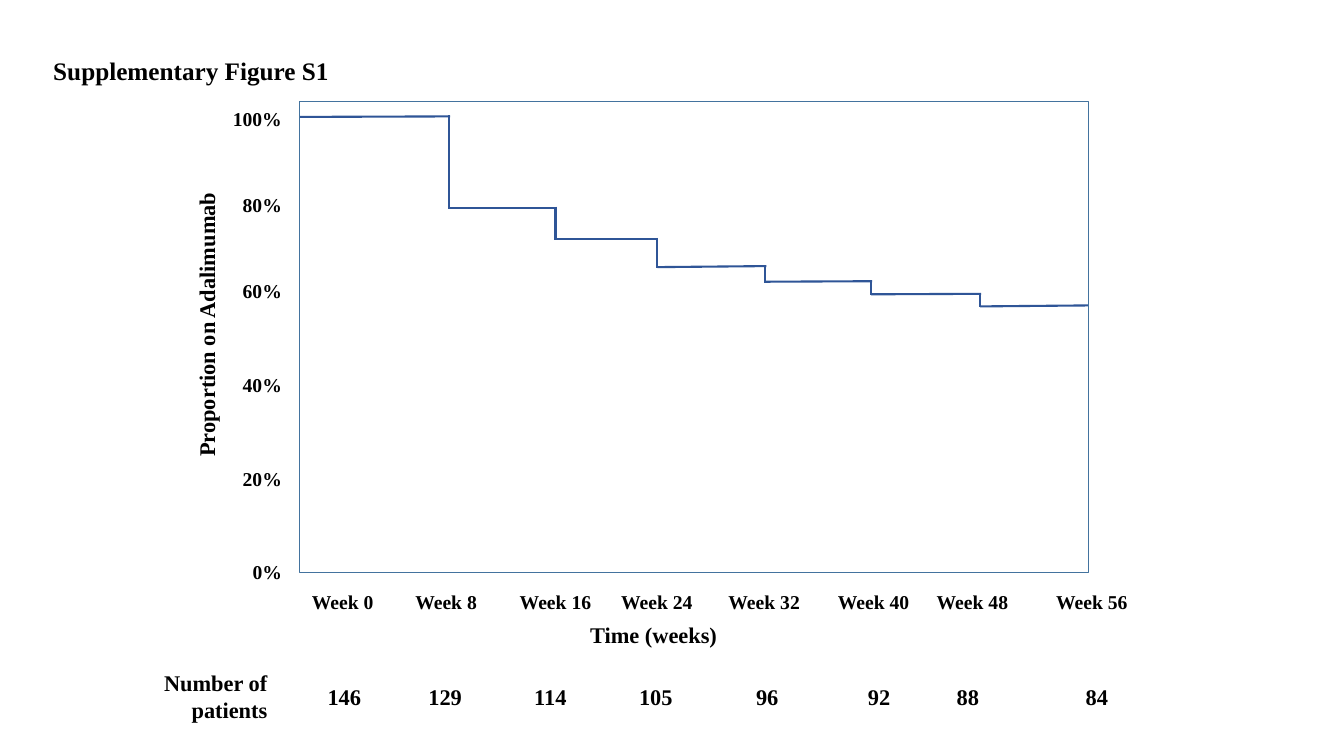
"""Builds the slide with the step curve of patients staying on treatment."""
from itertools import pairwise

from lxml import etree
from pptx import Presentation
from pptx.dml.color import RGBColor
from pptx.enum.shapes import MSO_CONNECTOR, MSO_SHAPE
from pptx.enum.text import MSO_ANCHOR, PP_ALIGN
from pptx.oxml.ns import qn
from pptx.util import Inches, Pt

LEFT, CENTER, RIGHT = PP_ALIGN.LEFT, PP_ALIGN.CENTER, PP_ALIGN.RIGHT
MIDDLE = MSO_ANCHOR.MIDDLE
STRAIGHT, RECTANGLE = MSO_CONNECTOR.STRAIGHT, MSO_SHAPE.RECTANGLE

FONT = "Times New Roman"
BLACK, WHITE = "000000", "FFFFFF"
CURVE_BLUE, FRAME_BLUE = "2F5597", "43739E"
COLUMNS, ROWS, CELL = 1333, 750, Inches(0.01)

TITLE = ("Supplementary Figure S1", 43, 50, 343, 40, 18, LEFT)
TIME_AXIS = ("Time (weeks)", 534, 611, 187, 37, 16, RIGHT)
PATIENTS_HEADING = ("Number of patients", 144, 658.5, 131, 64, 16, RIGHT)
PROPORTION_AXIS = ("Proportion on Adalimumab", 181, 138, 47, 325, 16, LEFT)

PERCENTS = [("100%", 101, 87), ("80%", 186, 72), ("60%", 271.5, 72),
            ("40%", 364.5, 72), ("20%", 457.5, 72), ("0%", 550.5, 72)]
WEEKS = [("Week 0", 297, 86), ("Week 8", 399.5, 86), ("Week 16", 504.5, 93),
         ("Week 24", 605, 93), ("Week 32", 711.5, 93), ("Week 40", 820, 93),
         ("Week 48", 918, 93), ("Week 56", 1036.5, 93)]
PATIENTS = ["146", "129", "114", "105", "96", "92", "88", "84"]
PATIENT_STOPS = [100, 205, 309, 425, 536, 624, 752]
PATIENTS_ROW = (315, 672.5, 818, 37, 16, LEFT)

PLOT = (297, 101, 782.5, 467)
DROPS = [297, 445.5, 551, 652, 759, 864, 972, 1079.5]
LEVELS = [(116, 115.5), (206, 206), (237, 237), (265, 264),
          (279.5, 279), (292, 291.5), (304, 303)]

PERCENT_RIGHT, WEEK_TOP, LABEL_HEIGHT, OVERLAP = 289.5, 580, 34, 1


def color(hex_code):
    return RGBColor.from_string(hex_code)


def cells(*counts):
    return [round(count * CELL) for count in counts]


def add_label(slide, wording, left, top, width, height, size, align, stops=()):
    label = slide.shapes.add_shape(RECTANGLE, *cells(left, top, width, height))
    label.shadow.inherit = False
    label.fill.solid()
    label.fill.fore_color.rgb = color(WHITE)
    label.line.fill.background()
    frame = label.text_frame
    frame.word_wrap = True
    frame.vertical_anchor = MIDDLE
    paragraph = frame.paragraphs[0]
    paragraph.alignment = align
    if stops:
        tabs = etree.SubElement(paragraph._p.get_or_add_pPr(), qn("a:tabLst"))
        for stop in cells(*stops):
            etree.SubElement(tabs, qn("a:tab"), pos=str(stop), algn="l")
    run = paragraph.add_run()
    run.text = wording
    run.font.name = FONT
    run.font.size = Pt(size)
    run.font.bold = True
    run.font.color.rgb = color(BLACK)
    return label


def add_segment(slide, *ends):
    segment = slide.shapes.add_connector(STRAIGHT, *cells(*ends))
    segment.line.color.rgb = color(CURVE_BLUE)
    segment.line.width = Pt(1.5)
    properties = segment._element.find(qn("p:spPr"))
    etree.SubElement(properties, qn("a:effectLst"))


def add_plot(slide):
    for (start, end), (left, right) in zip(LEVELS, pairwise(DROPS)):
        reach = min(right + OVERLAP, DROPS[-1])
        add_segment(slide, left, start, reach, end)
    for x, ((_, high), (low, _)) in zip(DROPS[1:], pairwise(LEVELS)):
        add_segment(slide, x, high - OVERLAP, x, low + OVERLAP)
    plot = slide.shapes.add_shape(RECTANGLE, *cells(*PLOT))
    plot.shadow.inherit = False
    plot.fill.background()
    plot.line.color.rgb = color(FRAME_BLUE)
    plot.line.width = Pt(1)


def main():
    deck = Presentation()
    deck.slide_width, deck.slide_height = cells(COLUMNS, ROWS)
    slide = deck.slides.add_slide(deck.slide_layouts[6])

    add_label(slide, *TITLE).fill.background()
    add_label(slide, *TIME_AXIS)
    add_label(slide, "\t".join(PATIENTS), *PATIENTS_ROW, stops=PATIENT_STOPS)
    add_label(slide, *PATIENTS_HEADING)
    proportion = add_label(slide, *PROPORTION_AXIS)
    proportion.text_frame._txBody.bodyPr.set("vert", "vert270")

    for percent, top, width in PERCENTS:
        add_label(slide, percent, PERCENT_RIGHT - width, top,
                  width, LABEL_HEIGHT, 14, RIGHT)
    for week, left, width in WEEKS:
        add_label(slide, week, left, WEEK_TOP, width, LABEL_HEIGHT, 14, CENTER)
    add_plot(slide)
    deck.save("out.pptx")


if __name__ == "__main__":
    main()
